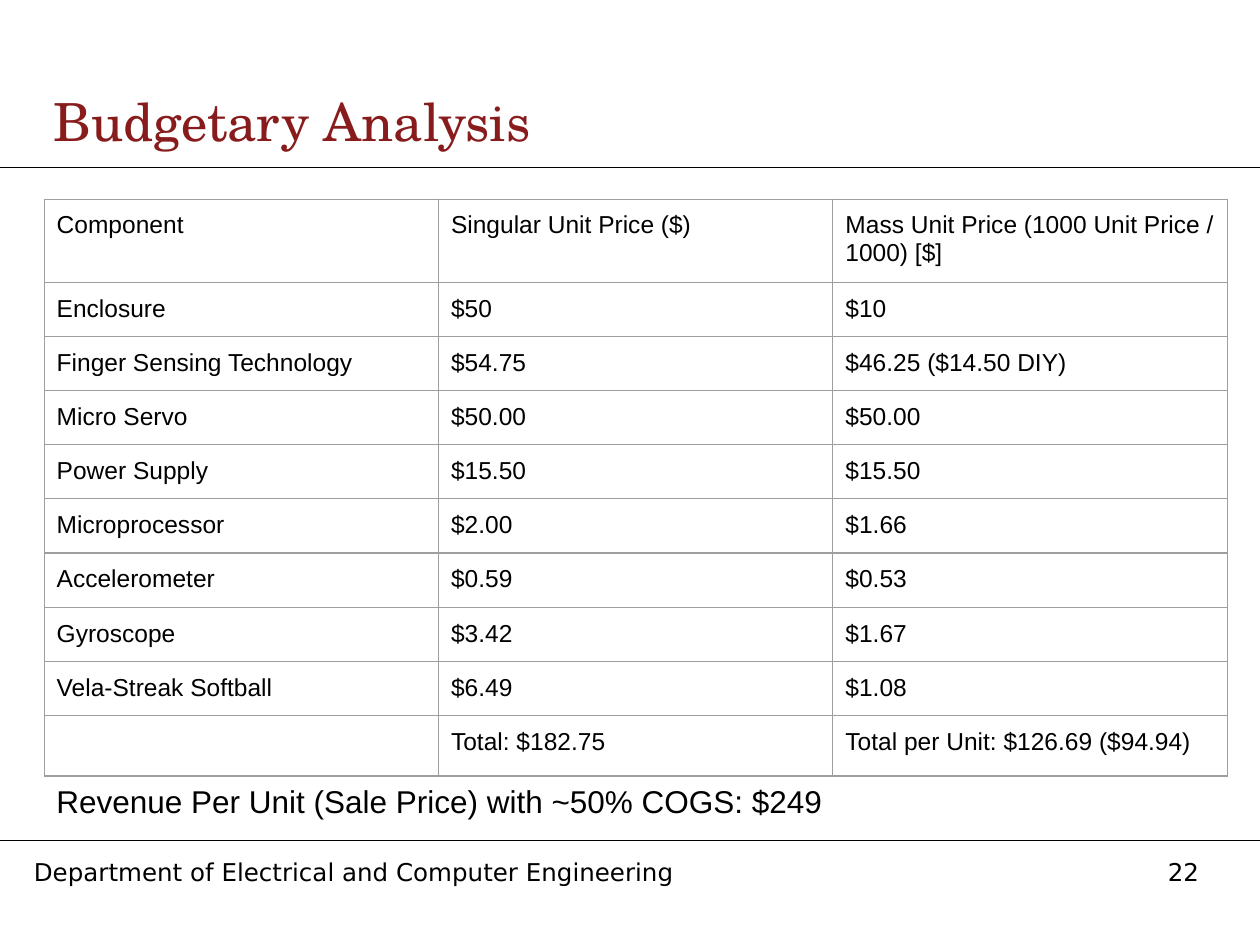
from lxml.etree import SubElement as Sub
from pptx import Presentation
from pptx.dml.color import RGBColor as Rgb
from pptx.enum.shapes import MSO_CONNECTOR as Conn
from pptx.enum.text import MSO_ANCHOR as Anchor
from pptx.oxml.ns import qn
from pptx.util import Inches as In, Pt

# Content
TITLE = "Budgetary Analysis"
ROWS = [
    ("Component", "Singular Unit Price ($)",
     "Mass Unit Price (1000 Unit Price / 1000) [$]"),
    ("Enclosure", "$50", "$10"),
    ("Finger Sensing Technology", "$54.75", "$46.25 ($14.50 DIY)"),
    ("Micro Servo", "$50.00", "$50.00"),
    ("Power Supply", "$15.50", "$15.50"),
    ("Microprocessor", "$2.00", "$1.66"),
    ("Accelerometer", "$0.59", "$0.53"),
    ("Gyroscope", "$3.42", "$1.67"),
    ("Vela-Streak Softball", "$6.49", "$1.08"),
    ("", "Total: $182.75", "Total per Unit: $126.69 ($94.94)"),
]
REVENUE = "Revenue Per Unit (Sale Price) with ~50% COGS: $249"
DEPT = "Department of Electrical and Computer Engineering"
PAGE = "22"

# Style and grid
HUES = {"ink": "000000", "title": "881C1C", "grid": "9E9E9E"}
SANS, SERIF, FOOT = "Arial", "TeX Gyre Schola", "DejaVu Sans"
WIDE, HIGH = 10, 7.5
LEFT, TOP, COL = 0.35, 1.58, 3.13
HEAD, BODY, LAST = 0.66, 0.43, 0.48
PAD = 0.1
RULES = (1.33, 6.67)

# Text boxes: text, place, size, font, hue, anchor, top and bottom inset
BOXES = [
    (PAGE, (9.17, 6.75, 0.67, 0.34), 14, FOOT, "ink", Anchor.TOP, 0.05),
    (DEPT, (0.17, 6.75, 5.65, 0.33), 14, FOOT, "ink", Anchor.TOP, 0.05),
    (TITLE, (0.33, 0.67, 9.67, 0.58), 30, SERIF, "title", Anchor.MIDDLE, PAD),
    (REVENUE, (LEFT, 6.11, 7.83, 0.9), 18, SANS, "ink", Anchor.TOP, PAD),
]


def write(para, text, size, face, hue):
    run = para.add_run()
    run.text = text
    font = run.font
    font.size, font.name = Pt(size), face
    font.color.rgb = Rgb.from_string(HUES[hue])


def inset(item, side, ends):
    item.margin_left = item.margin_right = In(side)
    item.margin_top = item.margin_bottom = In(ends)


def add_box(slide, text, place, size, face, hue, anchor, ends):
    frame = slide.shapes.add_textbox(*map(In, place)).text_frame
    frame.word_wrap = True
    frame.vertical_anchor = anchor
    inset(frame, PAD, ends)
    write(frame.paragraphs[0], text, size, face, hue)


def add_rule(slide, y):
    line = slide.shapes.add_connector(Conn.STRAIGHT, 0, In(y), In(WIDE), In(y))
    line.line.width = Pt(1)
    line.line.color.rgb = Rgb.from_string(HUES["ink"])
    Sub(line._element.spPr, qn("a:effectLst"))


def edge(cell):
    props = cell._tc.get_or_add_tcPr()
    for side in "LRTB":
        line = Sub(props, qn("a:ln" + side), w=str(Pt(0.75)))
        fill = Sub(line, qn("a:solidFill"))
        Sub(fill, qn("a:srgbClr"), val=HUES["grid"])


def add_grid(slide):
    tall = [HEAD] + [BODY] * (len(ROWS) - 2) + [LAST]
    wide = len(ROWS[0])
    table = slide.shapes.add_table(
        len(ROWS), wide, In(LEFT), In(TOP), In(COL * wide), In(sum(tall))).table
    table.first_row = table.horz_banding = False
    for col in table.columns:
        col.width = In(COL)
    for r, (row, high) in enumerate(zip(ROWS, tall)):
        table.rows[r].height = In(high)
        for c, text in enumerate(row):
            cell = table.cell(r, c)
            edge(cell)
            cell.fill.background()
            inset(cell, PAD, PAD)
            para = cell.text_frame.paragraphs[0]
            if text:
                write(para, text, 14, SANS, "ink")
            else:
                para.font.size = Pt(14)


def main():
    deck = Presentation()
    deck.slide_width, deck.slide_height = In(WIDE), In(HIGH)
    slide = deck.slides.add_slide(deck.slide_layouts[6])
    # Frame lines
    for y in RULES:
        add_rule(slide, y)
    # Prices
    add_grid(slide)
    # Title, footer and revenue
    for box in BOXES:
        add_box(slide, *box)
    deck.save("out.pptx")


if __name__ == "__main__":
    main()
